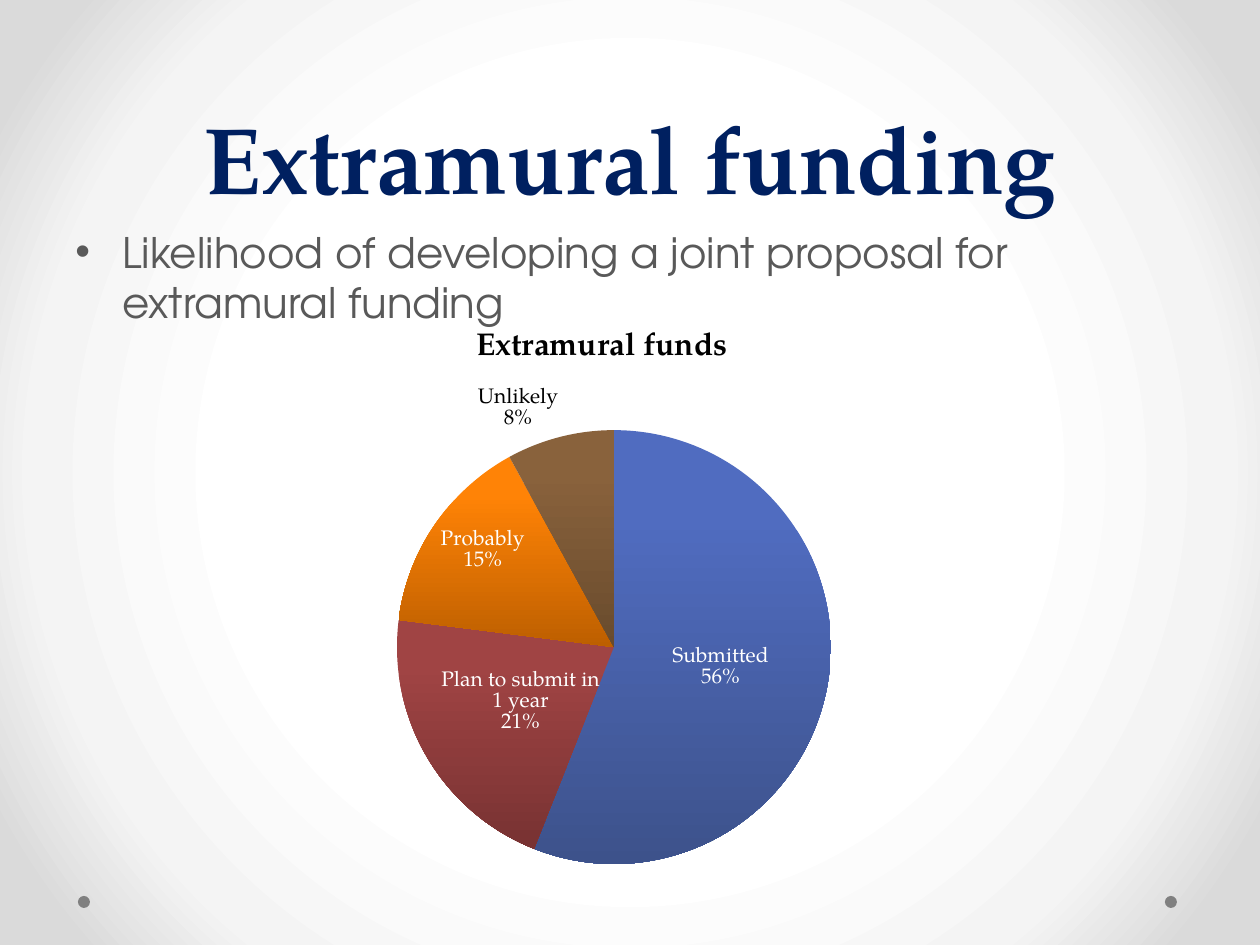
from lxml import etree
from pptx import Presentation
from pptx.chart.data import CategoryChartData
from pptx.dml.color import RGBColor
from pptx.enum.chart import XL_CHART_TYPE as ChartType, XL_LABEL_POSITION as LabelPosition
from pptx.enum.shapes import MSO_SHAPE as Shape
from pptx.enum.text import MSO_ANCHOR as Anchor, PP_ALIGN as Align
from pptx.oxml import parse_xml
from pptx.oxml.ns import nsdecls, qn
from pptx.util import Pt

PX = 914400 // 126
WIDTH, HEIGHT = 1260, 945
SERIF, SANS = "TeX Gyre Pagella", "TeX Gyre Adventor"

# Content
TITLE = "Extramural funding"
BULLET = "Likelihood of developing a joint proposal for extramural funding"
CHART_TITLE = "Extramural funds"
BACKGROUND = [(50, "FFFFFF"), (76, "F4F4F4"), (92, "DADADA")]
# category, percent, top colour, bottom colour, label colour, label position
SLICES = [
    ("Submitted", 56, "506CC0", "3D528B", "FFFFFF", LabelPosition.CENTER),
    ("Plan to submit in 1 year", 21, "A04444", "783232", "FFFFFF", LabelPosition.CENTER),
    ("Probably", 15, "FF8306", "BD5F00", "FFFFFF", LabelPosition.INSIDE_END),
    ("Unlikely", 8, "89623C", "694B2D", "000000", LabelPosition.OUTSIDE_END),
]
CHART_BOX = (215, 305, 774, 588)
PIE_BOX = (182, 125, 434, 434)  # inside the chart
DOTS = [(78, 896), (1165, 896)]
DOT_SIZE = 12


def color(value):
    return RGBColor.from_string(value)


def box(*lengths):
    return [length * PX for length in lengths]


def style(font, size, fill, name=SERIF, bold=False):
    font.size, font.name, font.bold = Pt(size), name, bold
    font.color.rgb = color(fill)


def add_text(slide, text, place, anchor=Anchor.TOP, align=Align.LEFT, **font):
    frame = slide.shapes.add_textbox(*box(*place)).text_frame
    frame.word_wrap, frame.vertical_anchor = True, anchor
    paragraph = frame.paragraphs[0]
    paragraph.alignment = align
    run = paragraph.add_run()
    run.text = text
    style(run.font, **font)
    return paragraph


def set_background(slide):
    fill = slide.background.fill
    fill.gradient()
    old = next(slide.background._cSld.iter(qn("a:gradFill")))
    stops = "".join(f'<a:gs pos="{position * 1000}"><a:srgbClr val="{value}"/></a:gs>'
                    for position, value in BACKGROUND)
    old.getparent().replace(old, parse_xml(
        f'<a:gradFill {nsdecls("a")} rotWithShape="1"><a:gsLst>{stops}</a:gsLst>'
        '<a:path path="circle"><a:fillToRect l="50000" t="50000" r="50000" b="50000"/>'
        '</a:path></a:gradFill>'))


def set_bullet(paragraph, indent):
    properties = paragraph._p.get_or_add_pPr()
    properties.set("marL", str(indent * PX))
    properties.set("indent", str(-indent * PX))
    etree.SubElement(properties, qn("a:buFont")).set("typeface", "Arial")
    etree.SubElement(properties, qn("a:buChar")).set("char", "•")


def place_pie(chart):
    left, top, width, height = PIE_BOX
    values = {"x": left / CHART_BOX[2], "y": top / CHART_BOX[3],
              "w": width / CHART_BOX[2], "h": height / CHART_BOX[3]}
    area = next(chart._chartSpace.iter(qn("c:plotArea")))
    for old in area.findall(qn("c:layout")):
        area.remove(old)
    modes = '<c:layoutTarget val="inner"/><c:xMode val="edge"/><c:yMode val="edge"/>'
    sizes = "".join(f'<c:{key} val="{value:.3f}"/>' for key, value in values.items())
    area.insert(0, parse_xml(f'<c:layout {nsdecls("c")}><c:manualLayout>{modes}{sizes}'
                             '</c:manualLayout></c:layout>'))


def add_pie(slide):
    data = CategoryChartData()
    data.categories = [row[0] for row in SLICES]
    data.add_series("Series 1", [row[1] for row in SLICES])
    chart = slide.shapes.add_chart(ChartType.PIE, *box(*CHART_BOX), data).chart
    style(chart.font, 10, "000000")
    chart.has_legend = False
    chart.has_title = True
    title = chart.chart_title.text_frame
    title.text = CHART_TITLE
    style(title.paragraphs[0].runs[0].font, 18, "000000", bold=True)
    place_pie(chart)

    plot = chart.plots[0]
    plot.vary_by_categories = True
    series = plot.series[0]
    for index, (_, _, top, bottom, label_color, position) in enumerate(SLICES):
        point = series.points[index]
        fill = point.format.fill
        fill.gradient()
        fill.gradient_angle = 270
        for stop, place, value in zip(fill.gradient_stops, (0.2, 1), (top, bottom)):
            stop.position, stop.color.rgb = place, color(value)
        point.format.line.fill.background()
        style(point.data_label.font, 12, label_color)
        point.data_label.position = position

    # Labels show category and percentage on separate lines
    for label in series._element.iter(qn("c:dLbl")):
        for name, shown in (("showVal", 0), ("showCatName", 1), ("showPercent", 1)):
            label.find(qn(f"c:{name}")).set("val", str(shown))
        etree.SubElement(label, qn("c:separator")).text = "\n"


def main():
    presentation = Presentation()
    presentation.slide_width, presentation.slide_height = box(WIDTH, HEIGHT)
    slide = presentation.slides.add_slide(presentation.slide_layouts[6])
    set_background(slide)

    # Corner dots
    for left, top in DOTS:
        shape = slide.shapes.add_shape(Shape.OVAL, *box(left, top, DOT_SIZE, DOT_SIZE))
        shape.shadow.inherit = False
        shape.fill.solid()
        shape.fill.fore_color.rgb = color("808080")
        shape.line.fill.background()

    # Title and bullet
    heading = add_text(slide, TITLE, (63, 0, 1134, 220), anchor=Anchor.BOTTOM,
                       align=Align.CENTER, size=54, fill="002060", bold=True)
    heading.line_spacing = Pt(58)
    body = add_text(slide, BULLET, (63, 220, 1134, 136), size=24, fill="595959", name=SANS)
    body.space_before = Pt(4.8)
    set_bullet(body, 47)

    add_pie(slide)
    presentation.save("out.pptx")


if __name__ == "__main__":
    main()
